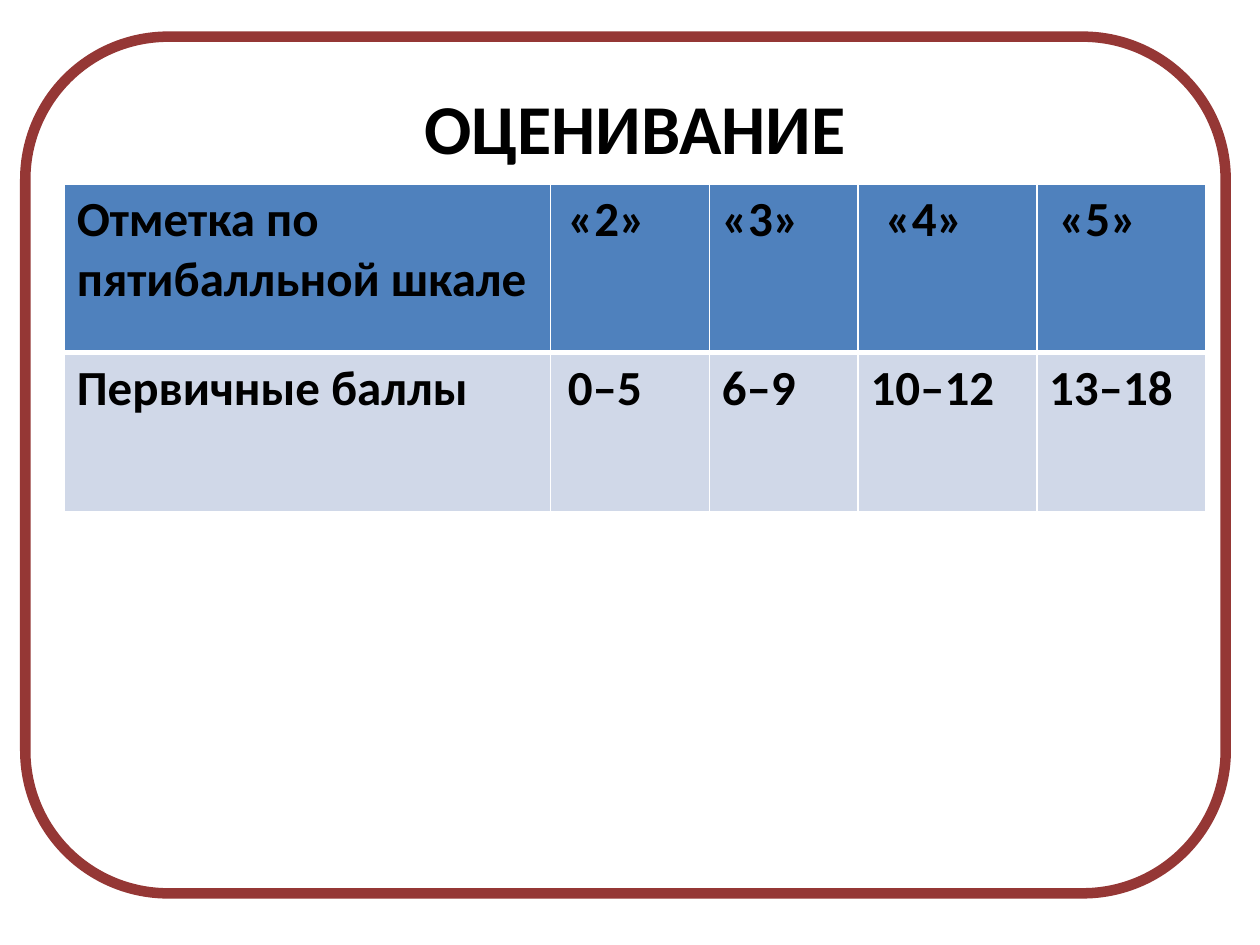
from lxml.etree import SubElement
from pptx import Presentation
from pptx.dml.color import RGBColor
from pptx.enum.shapes import MSO_SHAPE
from pptx.enum.text import PP_ALIGN
from pptx.oxml.ns import qn
from pptx.util import Cm, Pt

# Content
TITLE = "ОЦЕНИВАНИЕ"
ROWS = [
    ["Отметка по\nпятибалльной шкале", "«2»", "«3»", "«4»", "«5»"],
    ["Первичные баллы", "0–5", "6–9", "10–12", "13–18"],
]

# Table measures in cm: column widths, row heights, left cell margins
WIDTHS = [9.8, 3.2, 3.0, 3.6, 3.4]
HEIGHTS = [3.4, 3.2]
PADS = [[0.25, 0.35, 0.25, 0.55, 0.45],
        [0.25, 0.35, 0.25, 0.25, 0.25]]

HEX = {"frame": "953735", "head": "4F81BD", "body": "D0D8E8",
       "text": "000000", "white": "FFFFFF"}


def color(name):
    return RGBColor.from_string(HEX[name])


def write(frame, text, size=28, align=PP_ALIGN.LEFT):
    frame.word_wrap = True
    frame.text = text
    for para in frame.paragraphs:
        para.alignment = align
        font = para.font
        font.name, font.size, font.bold = "Calibri", Pt(size), True
        font.color.rgb = color("text")


def edge(cell, side, width):
    props = cell._tc.get_or_add_tcPr()
    line = SubElement(props, qn(f"a:ln{side}"), w=str(Pt(width)))
    fill = SubElement(line, qn("a:solidFill"))
    SubElement(fill, qn("a:srgbClr"), val=HEX["white"])


deck = Presentation()
deck.slide_width, deck.slide_height = Cm(25.4), Cm(19.05)
slide = deck.slides.add_slide(deck.slide_layouts[6])

# Rounded frame
frame = slide.shapes.add_shape(
    MSO_SHAPE.ROUNDED_RECTANGLE, Cm(0.51), Cm(0.74), Cm(24.2), Cm(17.27))
frame.shadow.inherit = False
frame.fill.solid()
frame.fill.fore_color.rgb = color("white")
frame.line.color.rgb = color("frame")
frame.line.width = Pt(6)

# Title
title = slide.shapes.add_textbox(Cm(2), Cm(1.58), Cm(21.6), Cm(2))
write(title.text_frame, TITLE, size=40, align=PP_ALIGN.CENTER)

# Grade table
table = slide.shapes.add_table(
    len(HEIGHTS), len(WIDTHS), Cm(1.3), Cm(3.71),
    Cm(sum(WIDTHS)), Cm(sum(HEIGHTS))).table
for col, width in zip(table.columns, WIDTHS):
    col.width = Cm(width)
for r, (row, texts) in enumerate(zip(table.rows, ROWS)):
    row.height = Cm(HEIGHTS[r])
    for cell, text, pad in zip(row.cells, texts, PADS[r]):
        write(cell.text_frame, text)
        cell.margin_left = Cm(pad)
        for side in "LRTB":
            rule = (r, side) in [(0, "B"), (1, "T")]
            edge(cell, side, 3 if rule else 1)
        cell.fill.solid()
        cell.fill.fore_color.rgb = color("body" if r else "head")

deck.save("out.pptx")
